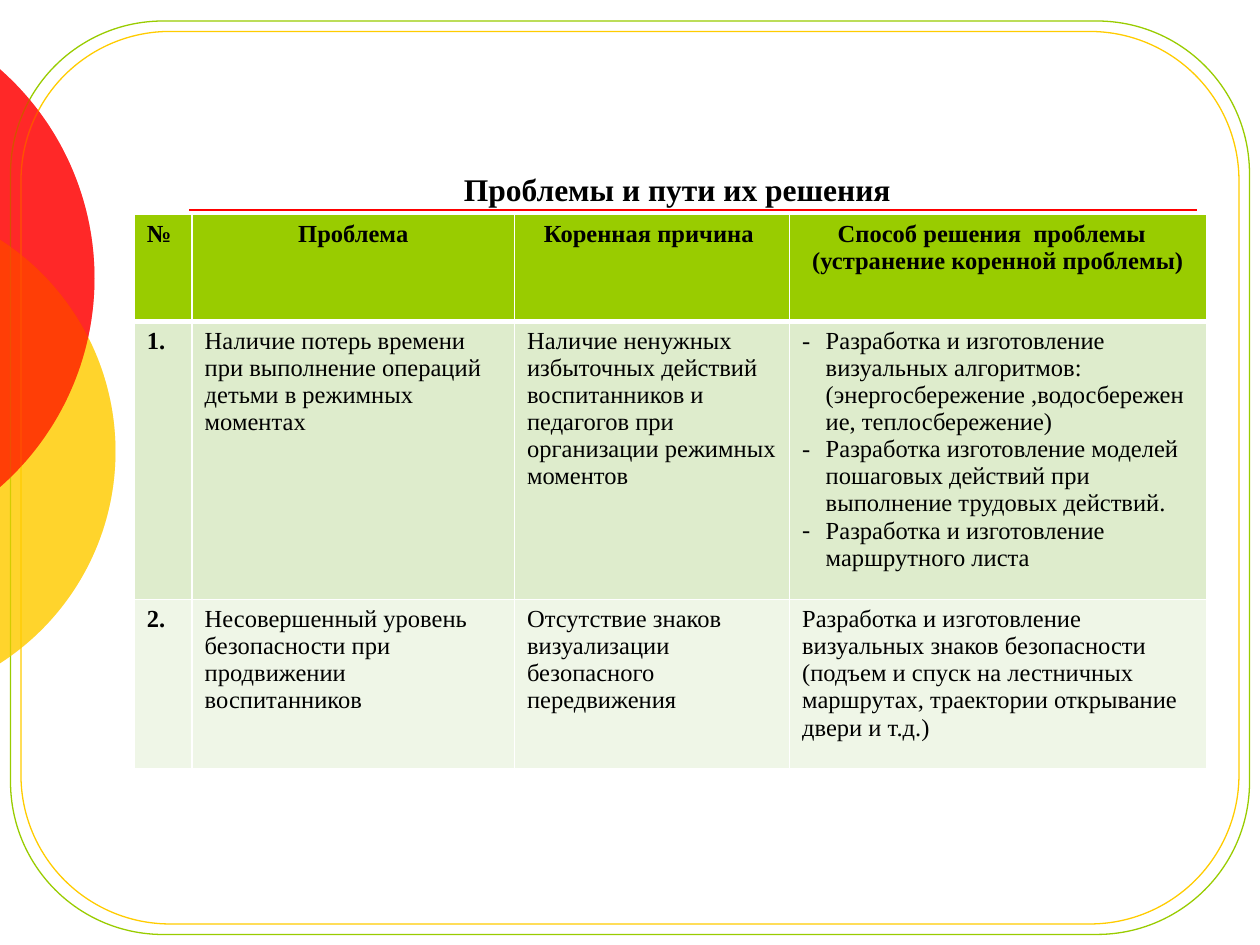
"""Build a slide with a table of problems, root causes and solutions."""
from math import acos, cos, sin, tan

from lxml import etree
from pptx import Presentation
from pptx.dml.color import RGBColor
from pptx.enum.shapes import MSO_CONNECTOR, MSO_SHAPE
from pptx.enum.text import PP_ALIGN
from pptx.oxml.ns import qn
from pptx.util import Inches, Pt

ROUNDED = MSO_SHAPE.ROUNDED_RECTANGLE
STRAIGHT = MSO_CONNECTOR.STRAIGHT
LEFT, CENTER = PP_ALIGN.LEFT, PP_ALIGN.CENTER
THEME = {
    "font": "Times New Roman", "title_size": 18, "table_size": 14,
    "text": "000000", "green": "99CC00", "yellow": "FFCC00", "red": "FF0000",
    "border": "FFFFFF", "rows": ["99CC00", "DEECCC", "EFF6E7"],
}
UNITS_PER_INCH = 12
DASH_INDENT = 2.25


def grid(units):
    return Inches(units / UNITS_PER_INCH)


def format_text(paragraph, size, bold, alignment=LEFT):
    paragraph.alignment = alignment
    for run in paragraph.runs:
        run.font.name = THEME["font"]
        run.font.size = Pt(size)
        run.font.bold = bold
        run.font.color.rgb = RGBColor.from_string(THEME["text"])


presentation = Presentation()
presentation.slide_width, presentation.slide_height = grid(120), grid(90)
slide = presentation.slides.add_slide(presentation.slide_layouts[6])
shapes = slide.shapes

circles = [(-13, 43, 24, "yellow", 58), (-17.5, 26.5, 26.5, "red", 60)]
frames = [(1, 2, 118, 87, "green"), (2, 3, 116, 85, "yellow")]
for layer in ("back", "front"):
    for center_x, center_y, radius, color, opacity in circles:
        angle = acos(-center_x / radius)
        handle = 4 / 3 * tan(angle / 4)
        edge_x, edge_y = cos(angle), sin(angle)
        bend_x, bend_y = edge_x + handle * edge_y, edge_y - handle * edge_x
        curves = [[(bend_x, -bend_y), (1, -handle), (1, 0)],
                  [(1, handle), (bend_x, bend_y), (edge_x, edge_y)]]

        builder = shapes.build_freeform(grid(0), grid(center_y - radius * edge_y))
        builder.add_line_segments([(grid(0), grid(center_y + radius * edge_y)),
                                   (grid(center_x + radius), grid(center_y))])
        segment = builder.convert_to_shape()
        segment.left, segment.top = grid(center_x - radius), grid(center_y - radius)
        segment.width = segment.height = grid(2 * radius)
        outline = next(segment.element.iter(qn("a:path")))
        outline.set("w", str(segment.width))
        outline.set("h", str(segment.height))
        for command in list(outline)[1:]:
            outline.remove(command)
        for curve in curves:
            etree.SubElement(outline, qn("a:cubicBezTo"))
        etree.SubElement(outline, qn("a:close"))
        outline[0].remove(outline[0][0])
        for command, points in zip(outline, [[(edge_x, -edge_y)], *curves]):
            for x, y in points:
                etree.SubElement(command, qn("a:pt"), x=str(grid(radius * (1 + x))),
                                 y=str(grid(radius * (1 + y))))

        segment.shadow.inherit = False
        segment.line.fill.background()
        segment.fill.solid()
        segment.fill.fore_color.rgb = RGBColor.from_string(THEME[color])
        fill_color = segment.element.spPr.find(qn("a:solidFill"))[0]
        etree.SubElement(fill_color, qn("a:alpha"), val=str(opacity * 1000))

    if layer == "back":
        for left, top, width, height, color in frames:
            frame = shapes.add_shape(ROUNDED, grid(left), grid(top), grid(width), grid(height))
            frame.adjustments[0] = 0.167
            frame.shadow.inherit = False
            frame.fill.background()
            frame.line.color.rgb = RGBColor.from_string(THEME[color])
            frame.line.width = Pt(0.75)
        rule = shapes.add_connector(STRAIGHT, grid(18), grid(20), grid(114), grid(20))
        rule.line.color.rgb = RGBColor.from_string(THEME["red"])
        rule.line.width = Pt(1)
        etree.SubElement(rule.element.spPr, qn("a:effectLst"))

title = shapes.add_textbox(grid(43), grid(15.6), grid(51), grid(4.8))
title.text_frame.word_wrap = True
title.text_frame.text = "Проблемы и пути их решения"
format_text(title.text_frame.paragraphs[0], THEME["title_size"], True)

content = [
    ["№", "Проблема", "Коренная причина ",
     "Способ решения  проблемы   (устранение коренной проблемы)"],
    ["1.",
     "Наличие потерь времени при выполнение операций детьми в режимных моментах",
     "Наличие ненужных избыточных действий воспитанников и педагогов "
     "при организации режимных моментов",
     "Разработка и изготовление визуальных алгоритмов:"
     "(энергосбережение ,водосбережение, теплосбережение)\n"
     "Разработка изготовление моделей пошаговых действий при выполнение трудовых действий.\n"
     "Разработка и изготовление маршрутного листа"],
    ["2.",
     "Несовершенный уровень безопасности при продвижении воспитанников",
     "Отсутствие знаков визуализации безопасного передвижения",
     "Разработка и изготовление визуальных знаков безопасности (подъем и спуск "
     "на лестничных маршрутах, траектории открывание двери и т.д.)"],
]
column_widths = [5.5, 30.7, 26.2, 39.7]
row_heights = [10.2, 26.5, 16.1]
table_frame = shapes.add_table(len(row_heights), len(column_widths), grid(12.8), grid(20.4),
                               grid(sum(column_widths)), grid(sum(row_heights)))
table = table_frame.table
table.first_row = table.horz_banding = False
for column, width in zip(table.columns, column_widths):
    column.width = grid(width)
for row, height in zip(table.rows, row_heights):
    row.height = grid(height)

for row_index, row_texts in enumerate(content):
    for column_index, text in enumerate(row_texts):
        cell = table.cell(row_index, column_index)
        cell.text_frame.text = text
        cell.fill.solid()
        cell.fill.fore_color.rgb = RGBColor.from_string(THEME["rows"][row_index])
        bold = row_index == 0 or column_index == 0
        alignment = CENTER if row_index == 0 and column_index > 0 else LEFT
        paragraphs = cell.text_frame.paragraphs
        for paragraph in paragraphs:
            format_text(paragraph, THEME["table_size"], bold, alignment)
            if len(paragraphs) > 1:
                properties = paragraph._p.get_or_add_pPr()
                properties.set("marL", str(grid(DASH_INDENT)))
                properties.set("indent", str(-grid(DASH_INDENT)))
                etree.SubElement(properties, qn("a:buFont"), typeface=THEME["font"])
                etree.SubElement(properties, qn("a:buChar"), char="-")

        border_widths = {"L": 1, "R": 1, "T": 3 if row_index == 1 else 1,
                         "B": 3 if row_index == 0 else 1}
        cell_properties = cell._tc.get_or_add_tcPr()
        for position, (side, width) in enumerate(border_widths.items()):
            border = etree.Element(qn(f"a:ln{side}"), w=str(Pt(width)))
            border_fill = etree.SubElement(border, qn("a:solidFill"))
            etree.SubElement(border_fill, qn("a:srgbClr"), val=THEME["border"])
            cell_properties.insert(position, border)

presentation.save("out.pptx")
